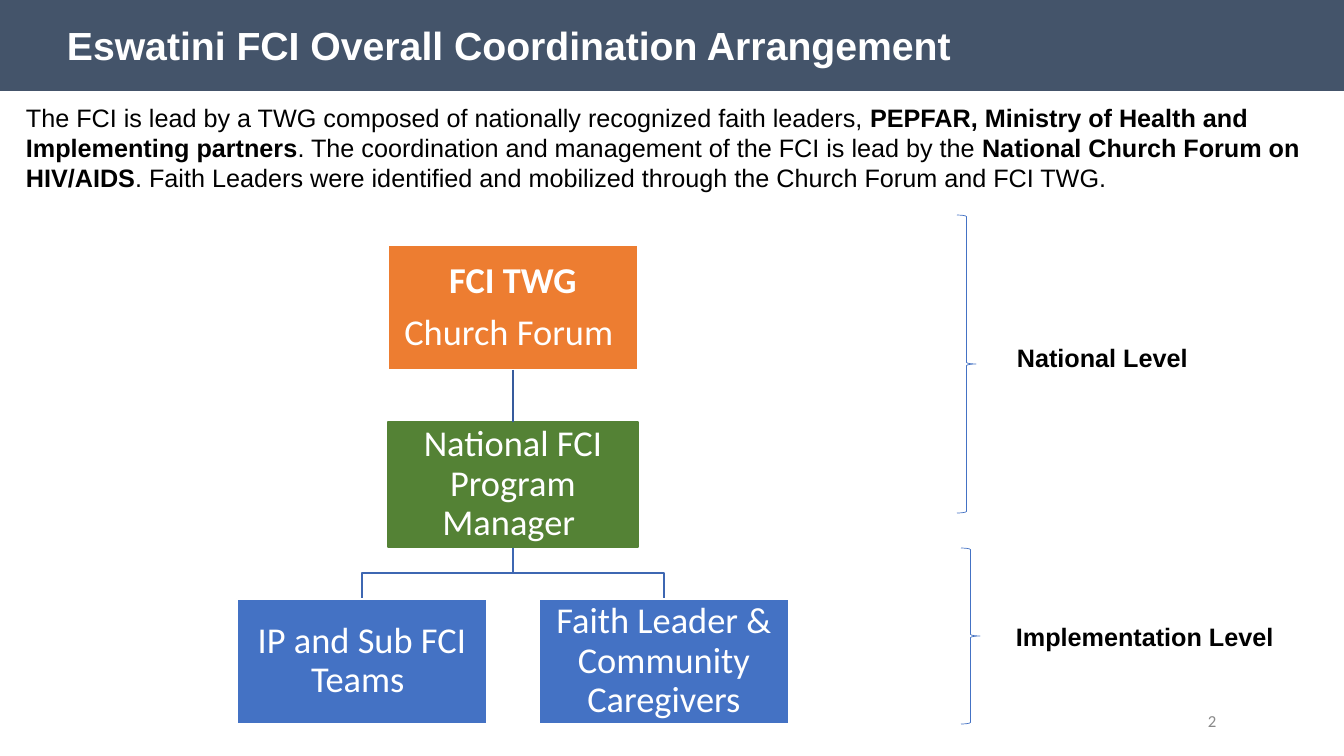
import pptx
import pptx.util
import pptx.dml.color
import pptx.enum.shapes
import pptx.enum.text
import pptx.oxml.ns
from lxml import etree

RGB = pptx.dml.color.RGBColor
SHAPE = pptx.enum.shapes.MSO_SHAPE
TEXT = pptx.enum.text
Pt = pptx.util.Pt

SLATE = RGB(0x44, 0x54, 0x6A)
ORANGE = RGB(0xED, 0x7D, 0x31)
GREEN = RGB(0x54, 0x82, 0x35)
BLUE = RGB(0x44, 0x72, 0xC4)
NAVY = RGB(0x36, 0x5B, 0x9D)
LINK = RGB(0x3E, 0x67, 0xB2)
WHITE = RGB(0xFF, 0xFF, 0xFF)
BLACK = RGB(0, 0, 0)
GREY = RGB(0x89, 0x89, 0x89)

TITLE = "Eswatini FCI Overall Coordination Arrangement"
INTRO = [
    ("The FCI is lead by a TWG composed of nationally recognized faith leaders, ", False),
    ("PEPFAR, Ministry of Health and Implementing partners", True),
    (". The coordination and management of the FCI is lead by the ", False),
    ("National Church Forum on HIV/AIDS", True),
    (". Faith Leaders were identified and mobilized through the Church Forum and FCI TWG.", False),
]
# column (-1, 0, 1), row, fill, line, paragraphs as (text, bold)
NODES = [
    (0, 0, ORANGE, WHITE, [("FCI TWG", True), ("Church Forum ", False)]),
    (0, 1, GREEN, GREEN, [("National FCI Program Manager ", False)]),
    (-1, 2, BLUE, WHITE, [("IP and Sub FCI Teams ", False)]),
    (1, 2, BLUE, WHITE, [("Faith Leader & Community Caregivers", False)]),
]
# brace (left, top, width, height), label, label (left, top, width, height), wrap
LEVELS = [
    ((957, 215, 19, 298), "National Level", (1007, 337, 193, 40), False),
    ((961, 548, 19, 176), "Implementation Level", (1006, 616, 285, 40), True),
]

WIDE, HIGH = 1344, 756
SCALE = 12192000 / WIDE
MID, TOP = 513, 245          # centre of the chart and top of its first row
BOX_W, BOX_H = 250, 125
SIDE, STEP = 151, 177        # column offset from the centre, row pitch


def emu(*sizes):
    return [round(size * SCALE) for size in sizes]


def style(run, size, color, bold=False, face="Arial"):
    font = run.font
    font.name, font.size, font.bold = face, Pt(size), bold
    font.color.rgb = color


def add_box(slide, kind, area, fill=None, line=None, width=1):
    box = slide.shapes.add_shape(kind, *emu(*area))
    box.shadow.inherit = False
    if fill is None:
        box.fill.background()
    else:
        box.fill.solid()
        box.fill.fore_color.rgb = fill
    if line is None:
        box.line.fill.background()
    else:
        box.line.color.rgb = line
        box.line.width = Pt(width)
    return box


def add_text(slide, area, parts, size, color, face="Arial", wrap=True):
    """Add a text box of one paragraph from (text, bold) parts."""
    frame = slide.shapes.add_textbox(*emu(*area)).text_frame
    frame.word_wrap = wrap
    for text, bold in parts:
        run = frame.paragraphs[0].add_run()
        run.text = text
        style(run, size, color, bold, face)


def add_title(slide):
    add_box(slide, SHAPE.RECTANGLE, (0, 0, WIDE, 91), SLATE)
    box = add_box(slide, SHAPE.RECTANGLE, (16, 12, 1118, 65), SLATE, SLATE)
    frame = box.text_frame
    frame.margin_left, frame.margin_right = emu(51, 8)
    frame.vertical_anchor = TEXT.MSO_ANCHOR.MIDDLE
    frame.text = TITLE
    frame.paragraphs[0].alignment = TEXT.PP_ALIGN.LEFT
    style(frame.paragraphs[0].runs[0], 28, WHITE, True)


def add_node(slide, col, row, fill, line, lines):
    area = (MID + col * SIDE - BOX_W // 2, TOP + row * STEP, BOX_W, BOX_H)
    box = add_box(slide, SHAPE.RECTANGLE, area, fill, line)
    frame = box.text_frame
    frame.margin_left, frame.margin_right, frame.margin_top, frame.margin_bottom = emu(2, 2, 2, 2)
    frame.vertical_anchor = TEXT.MSO_ANCHOR.MIDDLE
    frame.word_wrap = True
    frame.text = "\n".join(text for text, bold in lines)
    for para, (text, bold) in zip(frame.paragraphs, lines):
        para.alignment = TEXT.PP_ALIGN.CENTER
        para.line_spacing = 0.9
        para.space_after = Pt(9)
        style(para.runs[0], 26, WHITE, bold, "Calibri")
    return box


def add_stem(slide, upper, lower):
    stem = slide.shapes.add_connector(pptx.enum.shapes.MSO_CONNECTOR.STRAIGHT, 0, 0, 0, 0)
    stem.begin_connect(upper, 2)
    stem.end_connect(lower, 0)
    stem.line.color.rgb = NAVY
    stem.line.width = Pt(1)
    props = stem._element.spPr
    etree.SubElement(props, pptx.oxml.ns.qn("a:effectLst"))


def add_branch(slide, col):
    """Draw the bent line from the manager to a box in the last row."""
    start, end = TOP + STEP + BOX_H, TOP + 2 * STEP
    bend, side = (start + end) // 2, MID + col * SIDE
    path = slide.shapes.build_freeform(MID, start, scale=SCALE)
    path.add_line_segments([(MID, bend), (side, bend), (side, end)], close=False)
    branch = path.convert_to_shape()
    branch.shadow.inherit = False
    branch.fill.background()
    branch.line.color.rgb = LINK
    branch.line.width = Pt(1)


def main():
    deck = pptx.Presentation()
    deck.slide_width, deck.slide_height = emu(WIDE, HIGH)
    slide = deck.slides.add_slide(deck.slide_layouts[6])
    add_title(slide)
    add_text(slide, (1198, 706, 41, 30), [("2", False)], 12, GREY, "Calibri", False)
    for col in (1, -1):
        add_branch(slide, col)
    boxes = [add_node(slide, *node) for node in NODES]
    add_stem(slide, boxes[0], boxes[1])
    for brace, label, area, wrap in LEVELS:
        add_box(slide, SHAPE.RIGHT_BRACE, brace, None, BLUE, 0.5)
        add_text(slide, area, [(label, True)], 18, BLACK, wrap=wrap)
    add_text(slide, (16, 97, 1328, 102), INTRO, 18, BLACK)
    deck.save("out.pptx")


if __name__ == "__main__":
    main()
